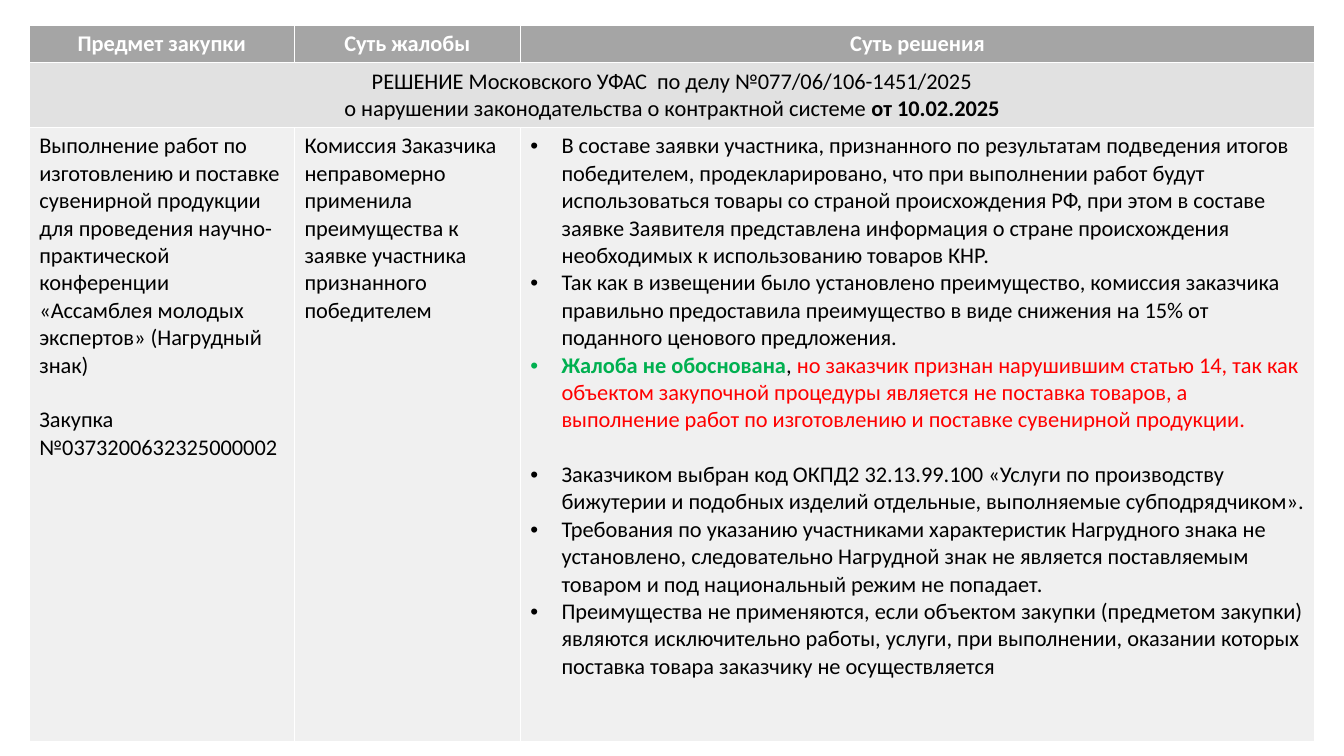
import pptx
import pptx.dml.color
import pptx.enum.text
import pptx.oxml
import pptx.oxml.ns
import pptx.util

Inches, Pt = pptx.util.Inches, pptx.util.Pt
ALIGN = pptx.enum.text.PP_ALIGN

COLORS = {
    "header": "A5A5A5", "case": "E1E1E1", "body": "F0F0F0",
    "white": "FFFFFF", "black": "000000", "green": "00B050", "red": "FF0000",
}
COLUMN_WIDTHS = [2.63, 2.24, 7.88]
ROW_HEIGHTS = [0.37, 0.63, 6.09]
INDENT = Inches(0.31)
BLANK_LINE = Pt(19.5)
BREAK = "\n"


def rgb(name):
    return pptx.dml.color.RGBColor.from_string(COLORS[name])


def fill_cell(cell, fill, paragraphs, align=ALIGN.LEFT, bullets=False, gap_before=None):
    """Write paragraphs, each a list of (text, colour, bold) spans, into a cell."""
    cell.fill.solid()
    cell.fill.fore_color.rgb = rgb(fill)
    frame = cell.text_frame
    for index, spans in enumerate(paragraphs):
        para = frame.paragraphs[0] if index == 0 else frame.add_paragraph()
        para.alignment = align
        if index == gap_before:
            para.space_before = BLANK_LINE
        if bullets:
            props = para._p.get_or_add_pPr()
            props.set("marL", str(INDENT))
            props.set("indent", str(-INDENT))
            for tag, key, value in [("a:buFont", "typeface", "Arial"), ("a:buChar", "char", "•")]:
                bullet = pptx.oxml.parse_xml(f"<{tag} {pptx.oxml.ns.nsdecls('a')}/>")
                bullet.set(key, value)
                props.append(bullet)
        for text, color, bold in spans:
            if text == BREAK:
                para.add_line_break()
                continue
            span = para.add_run()
            span.text = text
            for name, value in {"name": "Calibri", "size": Pt(16), "bold": bold}.items():
                setattr(span.font, name, value)
            span.font.color.rgb = rgb(color)


deck = pptx.Presentation()
deck.slide_width, deck.slide_height = Inches(13.33), Inches(7.5)
page = deck.slides.add_slide(deck.slide_layouts[6])

table = page.shapes.add_table(
    len(ROW_HEIGHTS), len(COLUMN_WIDTHS), Inches(0.29), Inches(0.25),
    Inches(sum(COLUMN_WIDTHS)), Inches(sum(ROW_HEIGHTS))).table
for column, width in zip(table.columns, COLUMN_WIDTHS):
    column.width = Inches(width)
for row, height in zip(table.rows, ROW_HEIGHTS):
    row.height = Inches(height)

for column, heading in enumerate(["Предмет закупки", "Суть жалобы", "Суть решения"]):
    fill_cell(table.cell(0, column), "header", [[(heading, "white", True)]], ALIGN.CENTER)

table.cell(1, 0).merge(table.cell(1, 2))
fill_cell(table.cell(1, 0), "case", [[
    ("РЕШЕНИЕ Московского УФАС  по делу №077/06/106-1451/2025", "black", False),
    (BREAK, "black", False),
    ("о нарушении законодательства о контрактной системе ", "black", False),
    ("от 10.02.2025", "black", True),
]], ALIGN.CENTER)

subject = [
    "Выполнение работ по",
    "изготовлению и поставке сувенирной продукции для проведения научно-практической "
    "конференции «Ассамблея молодых экспертов» (Нагрудный знак)",
    "Закупка №0373200632325000002",
]
complaint = [
    "Комиссия Заказчика",
    "неправомерно применила преимущества к заявке участника признанного",
    "победителем",
]
decision = [
    "В составе заявки участника, признанного по результатам подведения итогов победителем, "
    "продекларировано, что при выполнении работ будут использоваться товары со страной "
    "происхождения РФ, при этом в составе заявке Заявителя представлена информация о стране "
    "происхождения необходимых к использованию товаров КНР.",
    "Так как в извещении было установлено преимущество, комиссия заказчика правильно "
    "предоставила преимущество в виде снижения на 15% от поданного ценового предложения.",
    "Заказчиком выбран код ОКПД2 32.13.99.100 «Услуги по производству бижутерии и подобных "
    "изделий отдельные, выполняемые субподрядчиком».",
    "Требования по указанию участниками характеристик Нагрудного знака не установлено, "
    "следовательно Нагрудной знак не является поставляемым товаром и под национальный режим "
    "не попадает.",
    "Преимущества не применяются, если объектом закупки (предметом закупки) являются "
    "исключительно работы, услуги, при выполнении, оказании которых поставка товара "
    "заказчику не осуществляется",
]
verdict = [
    ("Жалоба не обоснована", "green", True),
    (", ", "black", False),
    ("но заказчик признан нарушившим статью 14, так как объектом закупочной процедуры "
     "является не поставка товаров, а выполнение работ по изготовлению и поставке "
     "сувенирной продукции.", "red", False),
]
subject, complaint, decision = (
    [[(text, "black", False)] for text in texts] for texts in (subject, complaint, decision))
decision.insert(2, verdict)

fill_cell(table.cell(2, 0), "body", subject, gap_before=2)
fill_cell(table.cell(2, 1), "body", complaint)
fill_cell(table.cell(2, 2), "body", decision, bullets=True, gap_before=3)

deck.save("out.pptx")
